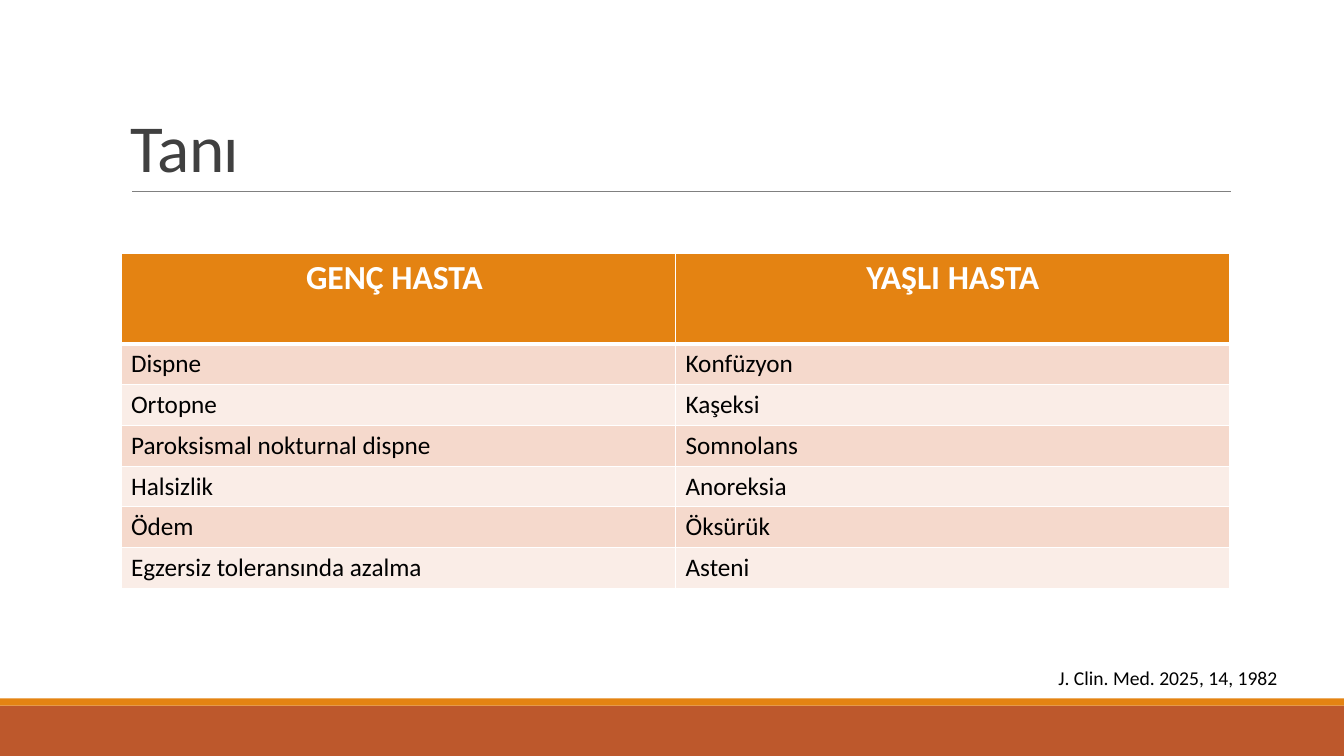
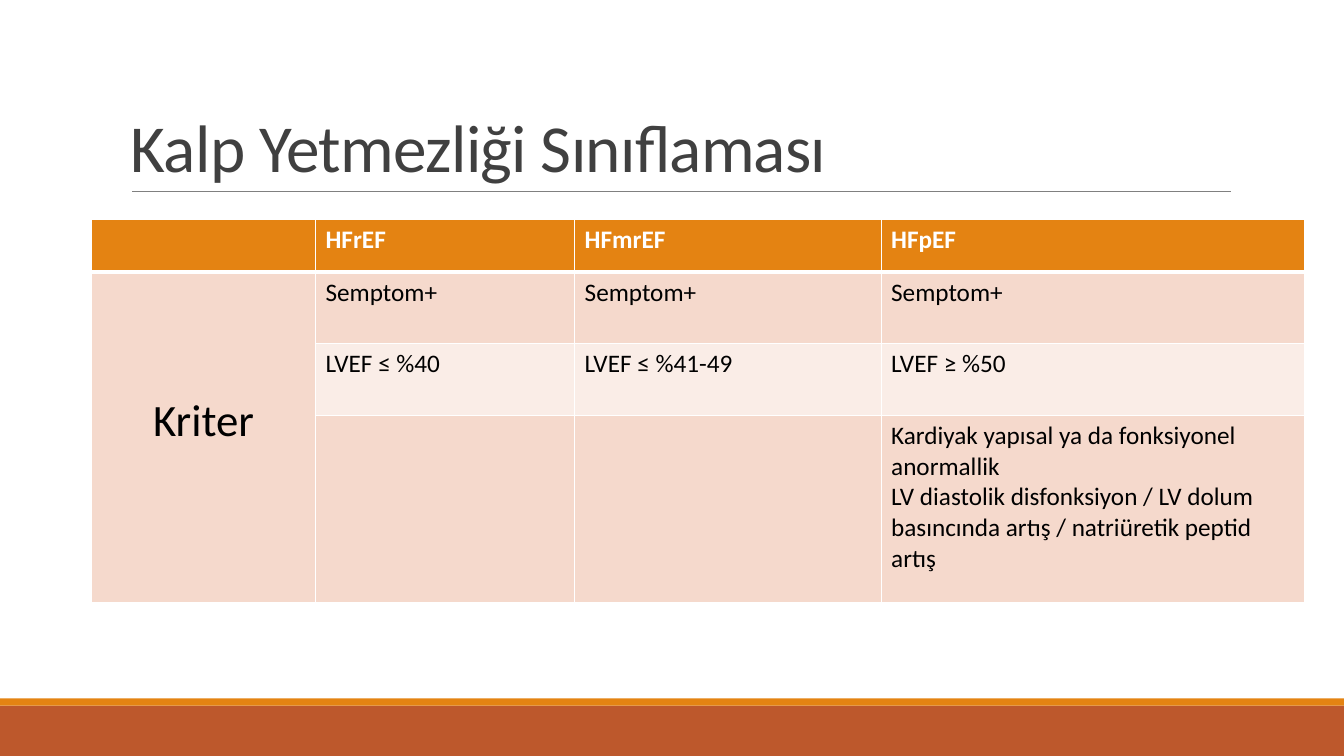
from dataclasses import dataclass

from lxml.etree import SubElement
from pptx import Presentation
from pptx.dml.color import RGBColor
from pptx.enum.shapes import MSO_CONNECTOR, MSO_SHAPE
from pptx.enum.text import MSO_ANCHOR, PP_ALIGN
from pptx.oxml.ns import qn
from pptx.util import Inches, Pt


@dataclass(frozen=True)
class Theme:
    font: str = "Calibri"
    accent: str = "E48312"
    base: str = "BD582C"
    rule: str = "808080"
    title: str = "404040"
    text: str = "000000"
    light: str = "FFFFFF"
    bands: tuple = ("F5D9CC", "FAEDE7")
    title_size: int = 48
    criterion_size: int = 32
    heading_size: int = 24
    body_size: int = 18
    citation_size: int = 14
    thin_border: int = 1
    thick_border: int = 3


class Deck:
    def __init__(self, theme):
        self.theme = theme
        self.presentation = Presentation()
        self.presentation.slide_width = Inches(13.33)
        self.presentation.slide_height = Inches(7.5)
        self.slide = None

    def add_slide(self, title):
        theme = self.theme
        self.slide = self.presentation.slides.add_slide(self.presentation.slide_layouts[6])
        self.add_band(7, 0.5, theme.base)
        self.add_band(6.93, 0.07, theme.accent)
        self.add_rule(1.31, 12.21, 1.9)
        paragraph = self.add_text(
            title, 1.2, 0.31, 11, 1.59, MSO_ANCHOR.BOTTOM, size=theme.title_size, color=theme.title
        )
        paragraph.line_spacing = 0.85
        paragraph.runs[0]._r.get_or_add_rPr().set("spc", "-50")

    def add_band(self, top, height, color):
        shape = self.slide.shapes.add_shape(
            MSO_SHAPE.RECTANGLE, 0, Inches(top), self.presentation.slide_width, Inches(height)
        )
        shape.shadow.inherit = False
        shape.fill.solid()
        shape.fill.fore_color.rgb = RGBColor.from_string(color)
        shape.line.fill.background()

    def add_rule(self, left, right, top):
        connector = self.slide.shapes.add_connector(
            MSO_CONNECTOR.STRAIGHT, Inches(left), Inches(top), Inches(right), Inches(top)
        )
        connector.line.color.rgb = RGBColor.from_string(self.theme.rule)
        connector.line.width = Pt(0.5)
        SubElement(connector._element.spPr, qn("a:effectLst"))

    def add_text(self, text, left, top, width, height, anchor=MSO_ANCHOR.TOP, **style):
        shape = self.slide.shapes.add_textbox(
            Inches(left), Inches(top), Inches(width), Inches(height)
        )
        frame = shape.text_frame
        frame.word_wrap = True
        frame.vertical_anchor = anchor
        self.fill_frame(frame, text, **style)
        return frame.paragraphs[0]

    def fill_frame(self, frame, text, size, color, bold=False, alignment=PP_ALIGN.LEFT):
        frame.text = text
        font_values = {"name": self.theme.font, "size": Pt(size), "bold": bold}
        for paragraph in frame.paragraphs:
            paragraph.alignment = alignment
            fonts = [run.font for run in paragraph.runs] or [paragraph.font]
            for font in fonts:
                for name, value in font_values.items():
                    setattr(font, name, value)
                font.color.rgb = RGBColor.from_string(color)

    def add_table(self, rows, left, top, widths, heights, heading_style):
        theme = self.theme
        table = self.slide.shapes.add_table(
            len(rows), len(widths), Inches(left), Inches(top),
            Inches(sum(widths)), Inches(sum(heights)),
        ).table
        table.first_row = table.horz_banding = False
        for column, width in zip(table.columns, widths):
            column.width = Inches(width)
        for row, height in zip(table.rows, heights):
            row.height = Inches(height)
        body_style = {"size": theme.body_size, "color": theme.text}
        for row_index, texts in enumerate(rows):
            heading = row_index == 0
            fill = theme.accent if heading else theme.bands[(row_index - 1) % 2]
            style = heading_style if heading else body_style
            for column_index, text in enumerate(texts):
                cell = table.cell(row_index, column_index)
                self.add_borders(cell, row_index)
                cell.fill.solid()
                cell.fill.fore_color.rgb = RGBColor.from_string(fill)
                self.fill_frame(cell.text_frame, text, **style)
        return table

    def add_borders(self, cell, row_index):
        theme = self.theme
        thick_side = {0: "lnB", 1: "lnT"}.get(row_index)
        properties = cell._tc.get_or_add_tcPr()
        for side in ("lnL", "lnR", "lnT", "lnB"):
            width = theme.thick_border if side == thick_side else theme.thin_border
            line = SubElement(properties, qn(f"a:{side}"), w=str(int(Pt(width))))
            fill = SubElement(line, qn("a:solidFill"))
            SubElement(fill, qn("a:srgbClr"), val=theme.light)

    def add_diagnosis(self):
        theme = self.theme
        self.add_slide("Tanı")
        rows = [
            ("GENÇ HASTA ", "YAŞLI HASTA"),
            ("Dispne", "Konfüzyon"),
            ("Ortopne", "Kaşeksi"),
            ("Paroksismal nokturnal dispne", "Somnolans"),
            ("Halsizlik", "Anoreksia"),
            ("Ödem", "Öksürük"),
            ("Egzersiz toleransında azalma", "Asteni"),
        ]
        heading_style = {
            "size": theme.heading_size, "color": theme.light,
            "bold": True, "alignment": PP_ALIGN.CENTER,
        }
        heights = [0.9] + [2.43 / 6] * (len(rows) - 1)
        self.add_table(rows, 1.2, 2.51, [5.5, 5.5], heights, heading_style)
        self.add_text(
            "J. Clin. Med. 2025, 14, 1982", 10.4, 6.56, 2.9, 0.34,
            size=theme.citation_size, color=theme.text,
        )

    def add_classification(self):
        theme = self.theme
        self.add_slide("Kalp Yetmezliği Sınıflaması")
        findings = (
            "Kardiyak yapısal ya da fonksiyonel anormallik\n"
            "LV diastolik disfonksiyon / LV dolum basıncında artış / natriüretik peptid artış"
        )
        rows = [
            ("", "HFrEF", "HFmrEF", "HFpEF"),
            ("", "Semptom+", "Semptom+", "Semptom+"),
            ("", "LVEF ≤ %40", "LVEF ≤ %41-49", "LVEF ≥ %50"),
            ("", "", "", findings),
        ]
        heading_style = {"size": theme.body_size, "color": theme.light, "bold": True}
        table = self.add_table(
            rows, 0.91, 2.18, [2.22, 2.57, 3.04, 4.2], [0.52, 0.71, 0.71, 1.86], heading_style
        )
        criterion = table.cell(1, 0)
        criterion.merge(table.cell(3, 0))
        cell_values = {"vertical_anchor": MSO_ANCHOR.MIDDLE, "margin_bottom": Inches(0.37)}
        for name, value in cell_values.items():
            setattr(criterion, name, value)
        self.fill_frame(
            criterion.text_frame, "Kriter",
            size=theme.criterion_size, color=theme.text, alignment=PP_ALIGN.CENTER,
        )


def main():
    deck = Deck(Theme())
    deck.add_diagnosis()
    deck.add_classification()
    deck.presentation.save("out.pptx")


if __name__ == "__main__":
    main()
